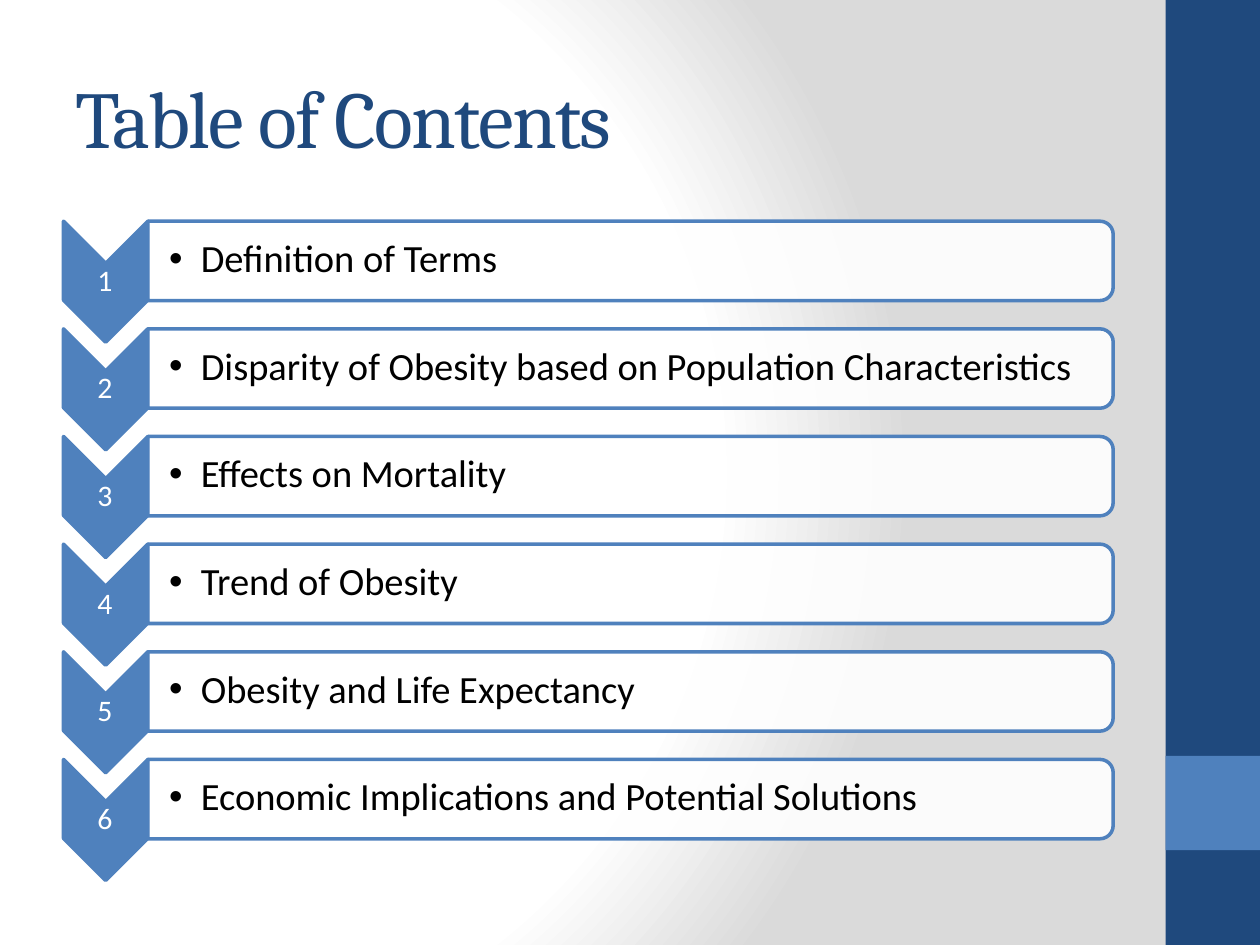
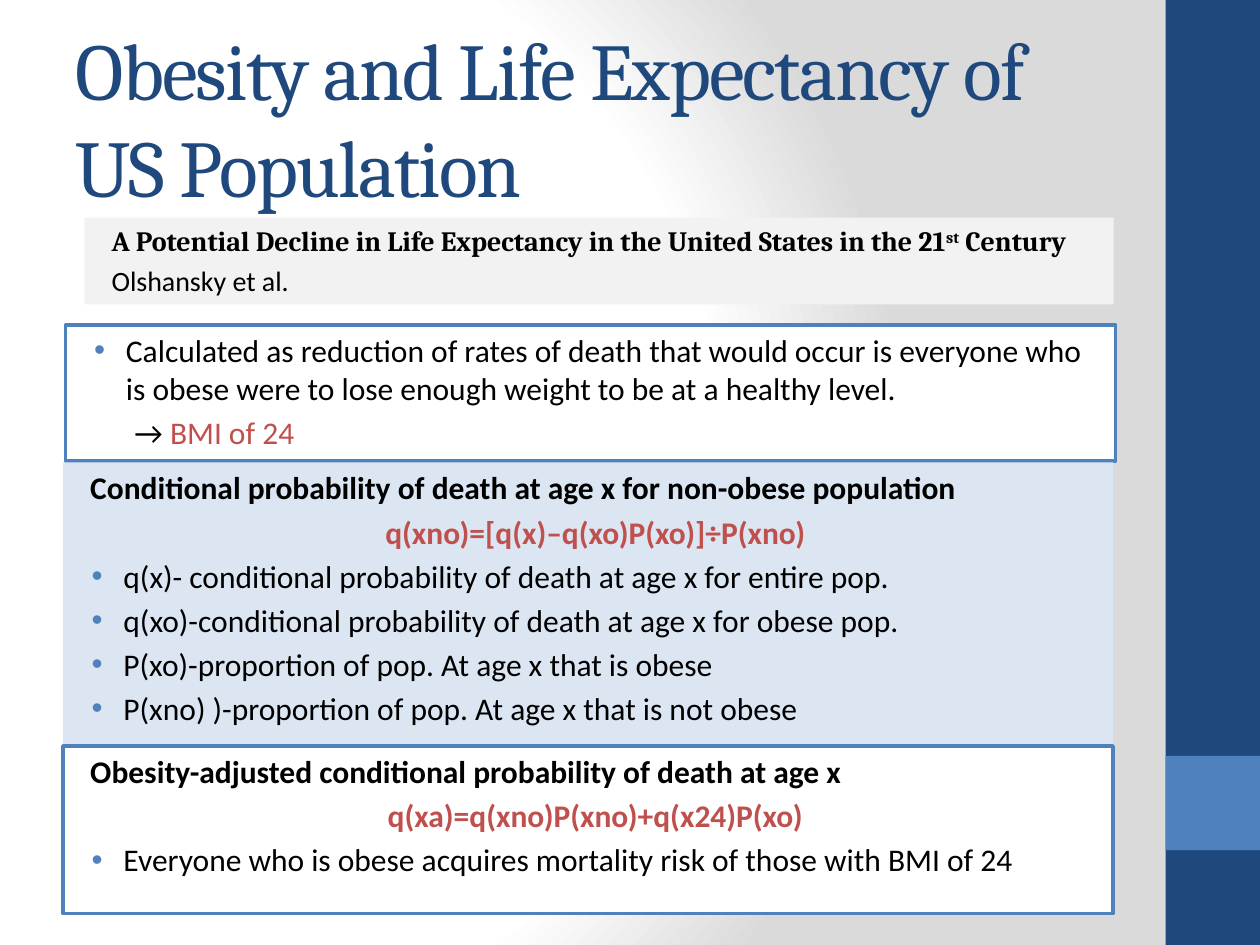
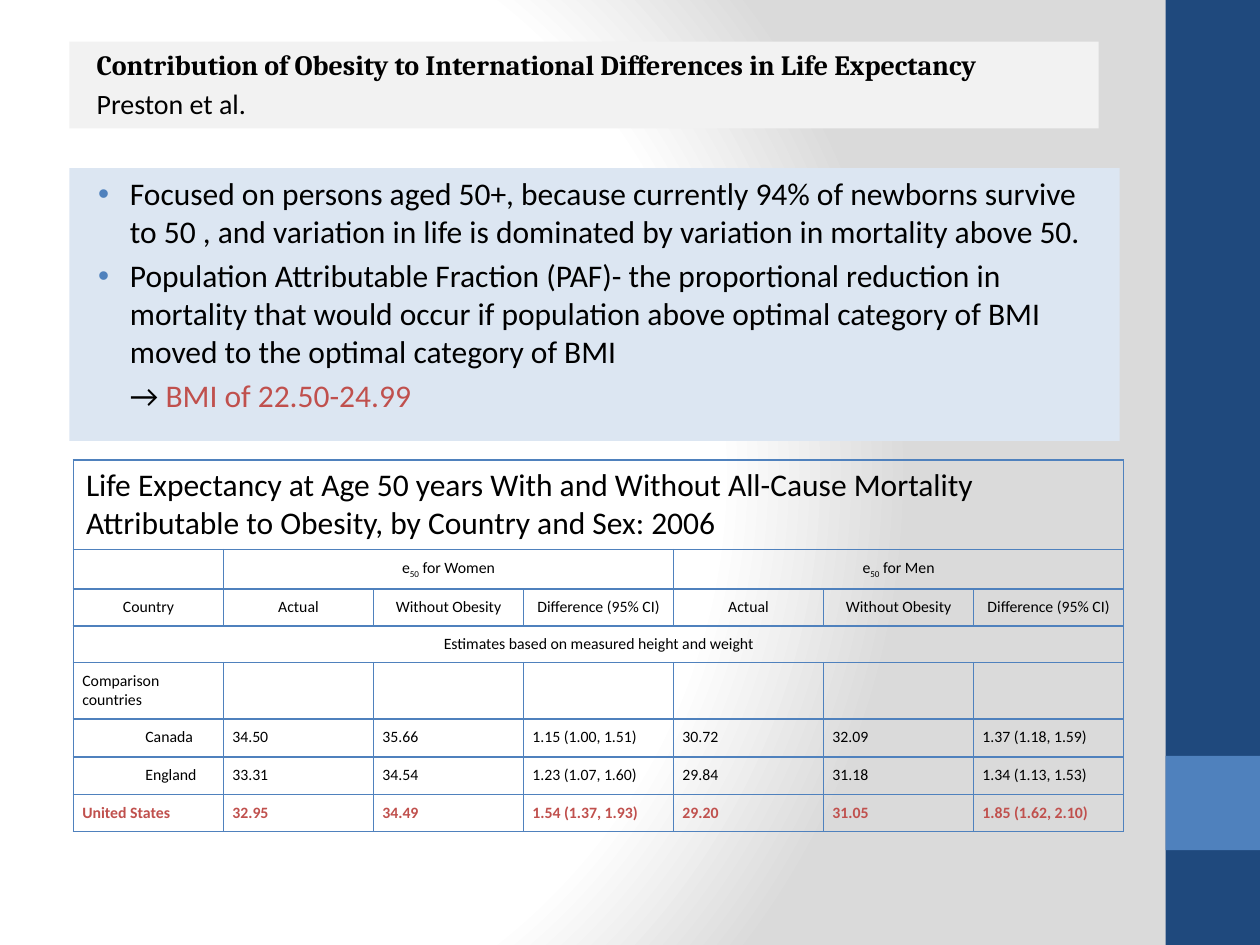
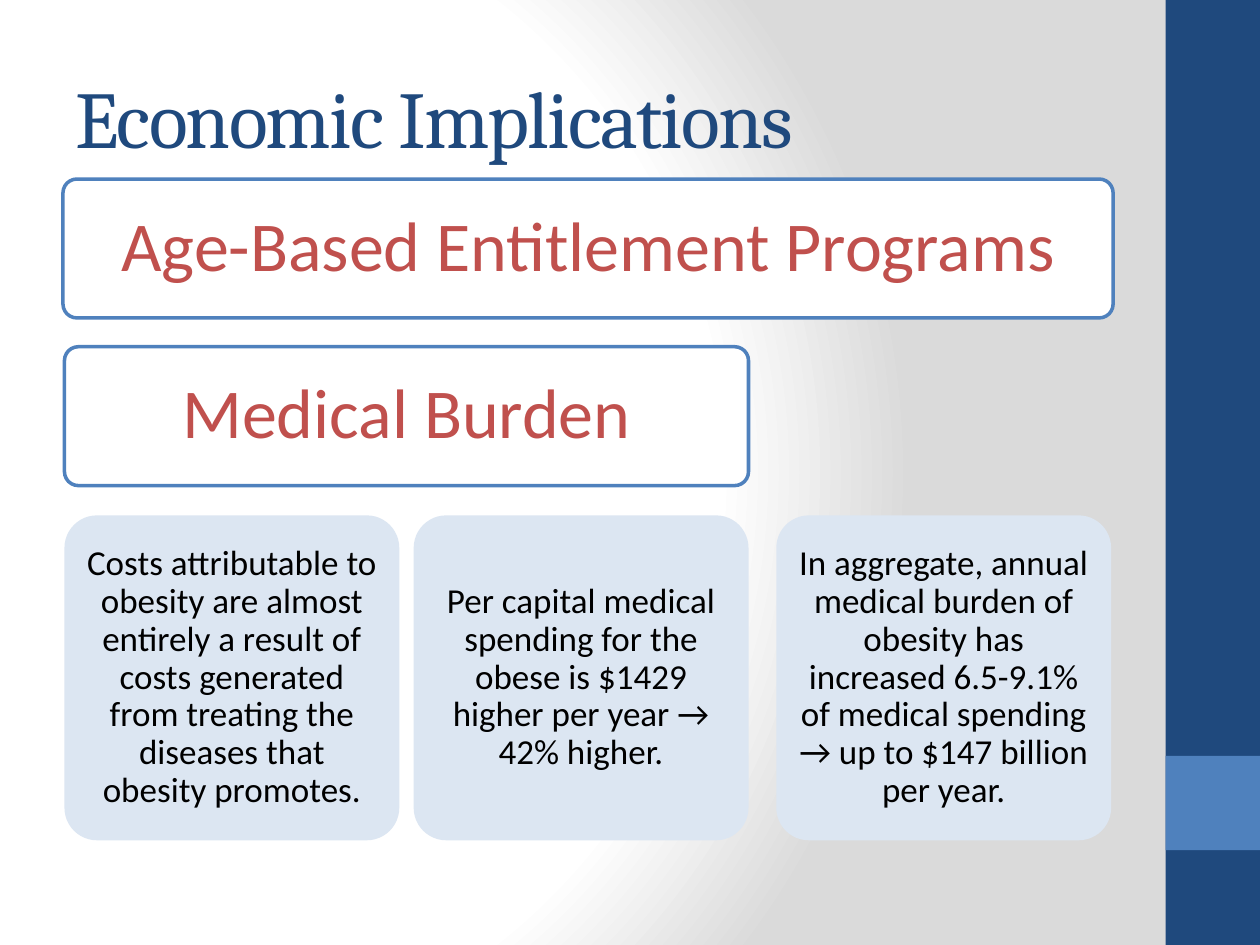
from lxml.etree import SubElement
from pptx import Presentation
from pptx.dml.color import RGBColor
from pptx.enum.shapes import MSO_SHAPE as Shape
from pptx.enum.text import MSO_ANCHOR as Anchor, MSO_AUTO_SIZE as AutoSize, PP_ALIGN as Align
from pptx.oxml import parse_xml
from pptx.oxml.ns import nsdecls, qn
from pptx.util import Cm, Pt

COLORS = {
    "navy": "1F497D",
    "blue": "4F81BD",
    "pale": "DCE6F2",
    "gray": "F2F2F2",
    "shade": "DADADA",
    "white": "FFFFFF",
    "black": "000000",
    "red": "C0504D",
}
RGB = {name: RGBColor.from_string(value) for name, value in COLORS.items()}


def add_box(page, kind, left, top, width, height, fill, line=None):
    box = page.shapes.add_shape(kind, Cm(left), Cm(top), Cm(width), Cm(height))
    box.shadow.inherit = False
    box.fill.solid()
    box.fill.fore_color.rgb = RGB[fill]
    if line:
        box.line.color.rgb = RGB[line]
        box.line.width = Pt(2)
    else:
        box.line.fill.background()
    box.text_frame.word_wrap = True
    box.text_frame.vertical_anchor = Anchor.TOP
    return box


def add_para(frame, parts, size, color="black", font="Calibri", bold=False,
             align=Align.LEFT, indent=0, bullet=None, before=0, spacing=None):
    """Fill the first empty paragraph or add one; parts is a text or (text, colour, baseline) runs."""
    para = frame.add_paragraph() if frame.text else frame.paragraphs[0]
    para.alignment = align
    para.space_before = Pt(before)
    para.line_spacing = spacing
    props = para._p.get_or_add_pPr()
    props.set("marL", str(Cm(indent)))
    props.set("indent", str(-Cm(0.64) if bullet else 0))
    if bullet:
        bullet_color = SubElement(props, qn("a:buClr"))
        SubElement(bullet_color, qn("a:srgbClr")).set("val", COLORS[bullet])
        SubElement(props, qn("a:buFont")).set("typeface", "Arial")
        SubElement(props, qn("a:buChar")).set("char", "•")
    para.font.size = Pt(size)
    para.font.name = font
    para.font.bold = bold
    para.font.color.rgb = RGB[color]
    for text, run_color, baseline in [(parts, None, 0)] if isinstance(parts, str) else parts:
        span = para.add_run()
        span.text = text
        if run_color:
            span.font.color.rgb = RGB[run_color]
        if baseline:
            span._r.get_or_add_rPr().set("baseline", str(baseline * 1000))


deck = Presentation()
deck.slide_width, deck.slide_height = Cm(25.4), Cm(19.05)

# Shared background, side band and titles
TITLES = [
    "Table of Contents",
    "Obesity and Life Expectancy of US Population",
    None,
    "Economic Implications",
]
pages = []
for title in TITLES:
    page = deck.slides.add_slide(deck.slide_layouts[5 if title else 6])
    pages.append(page)
    if not title:
        continue
    holder = page.shapes.title
    holder.left, holder.top, holder.width, holder.height = Cm(1.27), Cm(0.76), Cm(21.17), Cm(3.18)
    holder.text_frame.auto_size = AutoSize.NONE
    holder.text_frame.vertical_anchor = Anchor.MIDDLE
    add_para(holder.text_frame, title, 46, "navy", "Cambria")
    holder.text_frame.paragraphs[0].runs[0]._r.get_or_add_rPr().set("spc", "-100")
contents_page, method_page, country_page, cost_page = pages

master = deck.slide_master
common = master.element.find(qn("p:cSld"))
for old_background in common.findall(qn("p:bg")):
    common.remove(old_background)
stops = "".join(
    f'<a:gs pos="{position}000"><a:srgbClr val="{COLORS[name]}"/></a:gs>'
    for position, name in [(0, "white"), (75, "white"), (100, "shade")]
)
common.insert(0, parse_xml(
    f'<p:bg {nsdecls("p", "a")}><p:bgPr><a:gradFill rotWithShape="1"><a:gsLst>{stops}</a:gsLst>'
    '<a:path path="circle"><a:fillToRect l="20000" t="50000" r="100000" b="50000"/></a:path>'
    "</a:gradFill><a:effectLst/></p:bgPr></p:bg>"
))
side_band = add_box(contents_page, Shape.RECTANGLE, 23.5, 0, 1.9, 19.05, "navy")
accent = add_box(contents_page, Shape.RECTANGLE, 23.5, 15.24, 1.9, 1.9, "blue")
for position, band in enumerate([side_band, accent], 2):
    master.shapes.element.insert(position, band.element)

# Table of contents
TOPICS = [
    "Definition of Terms",
    "Disparity of Obesity based on Population Characteristics",
    "Effects on Mortality",
    "Trend of Obesity",
    "Obesity and Life Expectancy",
    "Economic Implications and Potential Solutions",
]
for index, topic in enumerate(TOPICS):
    shift = 2.17 * index
    chevron = add_box(contents_page, Shape.CHEVRON, 0.91, 4.83 + shift, 2.44, 1.7, "blue", "blue")
    card = add_box(contents_page, Shape.ROUND_2_SAME_RECTANGLE,
                   11.91, -4.47 + shift, 1.6, 19.46, "white", "blue")
    chevron.rotation = card.rotation = 90
    card_color = card.element.spPr.find(qn("a:solidFill"))[0]
    SubElement(card_color, qn("a:alpha")).set("val", "90000")

    number_box = contents_page.shapes.add_textbox(Cm(1.27), Cm(5.31 + shift), Cm(1.7), Cm(0.74))
    topic_box = contents_page.shapes.add_textbox(Cm(2.98), Cm(4.52 + shift), Cm(19.38), Cm(1.45))
    for box, inset in [(number_box, 0.03), (topic_box, 0.43)]:
        frame = box.text_frame
        frame.word_wrap = True
        frame.vertical_anchor = Anchor.MIDDLE
        frame.margin_left = Cm(inset)
        frame.margin_right = frame.margin_top = frame.margin_bottom = Cm(0.04)
    add_para(number_box.text_frame, str(index + 1), 17, "white", align=Align.CENTER, spacing=0.9)
    add_para(topic_box.text_frame, topic, 22, indent=0.64, bullet="black", spacing=0.9)

# Cited studies on the two life expectancy slides
STUDIES = [
    (method_page, 1.7, 4.39, "Olshansky et al.", [
        ("A Potential Decline in Life Expectancy in the United States in the 21", None, 0),
        ("st", None, 30),
        (" Century", None, 0),
    ]),
    (country_page, 1.4, 0.84, "Preston et al.",
     "Contribution of Obesity to International Differences in Life Expectancy"),
]
for page, left, top, authors, study in STUDIES:
    box = add_box(page, Shape.RECTANGLE, left, top, 20.75, 1.75, "gray")
    add_para(box.text_frame, study, 16, font="Cambria", bold=True, indent=0.3, before=3.2)
    add_para(box.text_frame, authors, 16, indent=0.3, before=3.2)

# Text panels on the two life expectancy slides
HEADING = {"bold": True, "indent": 0.3}
FORMULA = {"bold": True, "indent": 0.3, "color": "red", "align": Align.CENTER}
POINT = {"indent": 0.97, "bullet": "blue"}
PANELS = [
    (method_page, 1.32, 6.55, 2.74, "white", "blue", [
        ("Calculated as reduction of rates of death that would occur is everyone who is obese "
         "were to lose enough weight to be at a healthy level.", POINT),
        ([("→ ", None, 0), ("BMI of 24", "red", 0)], {"indent": 1.14}),
    ]),
    (method_page, 1.27, 9.32, 5.72, "pale", None, [
        ("Conditional probability of death at age x for non-obese population", HEADING),
        ("q(xno)=[q(x)–q(xo)P(xo)]÷P(xno)", FORMULA),
        ("q(x)- conditional probability of death at age x for entire pop.", POINT),
        ("q(xo)-conditional probability of death at age x for obese pop.", POINT),
        ("P(xo)-proportion of pop. At age x that is obese", POINT),
        ("P(xno) )-proportion of pop. At age x that is not obese", POINT),
    ]),
    (method_page, 1.27, 15.04, 3.38, "white", "blue", [
        ("Obesity-adjusted conditional probability of death at age x", HEADING),
        ("q(xa)=q(xno)P(xno)+q(x24)P(xo)", FORMULA),
        ("Everyone who is obese acquires mortality risk of those with BMI of 24", POINT),
    ]),
    (country_page, 1.4, 3.39, 5.5, "pale", None, [
        ("Focused on persons aged 50+, because currently 94% of newborns survive to 50 , "
         "and variation in life is dominated by variation in mortality above 50.", POINT),
        ("Population Attributable Fraction (PAF)- the proportional reduction in mortality that "
         "would occur if population above optimal category of BMI moved to the optimal "
         "category of BMI", POINT),
        ([("→ ", None, 0), ("BMI of 22.50-24.99", "red", 0)], {"indent": 0.97}),
    ]),
]
for page, left, top, height, fill, line, lines in PANELS:
    panel = add_box(page, Shape.RECTANGLE, left, top, 21.17, height, fill, line)
    for text, style in lines:
        add_para(panel.text_frame, text, 18, before=3.6, **style)

# Life expectancy tables: top, row heights, merges (row, first, last column), rows
CAPTION = ("Life Expectancy at Age 50 years With and Without All-Cause Mortality "
           "Attributable to Obesity, by Country and Sex: 2006")
ESTIMATES = "Estimates based on measured height and weight"
MEASURES = ["Actual", "Without Obesity", "Difference (95% CI)"]
women, men = ([("e", None, 0), ("50", None, -25), (f" for {sex}", None, 0)]
              for sex in ("Women", "Men"))
TABLES = [
    (9.27, [1.81, 0.79, 0.74], [(0, 0, 6), (1, 1, 3), (1, 4, 6)], [
        [CAPTION] + [""] * 6,
        ["", women, "", "", men, "", ""],
        ["Country"] + MEASURES * 2,
    ]),
    (12.61, [0.74, 1.14, 0.76, 0.76, 0.74], [(0, 0, 6)], [
        [ESTIMATES] + [""] * 6,
        ["Comparison countries"] + [""] * 6,
        ["Canada", "34.50", "35.66", "1.15 (1.00, 1.51)", "30.72", "32.09", "1.37 (1.18, 1.59)"],
        ["England", "33.31", "34.54", "1.23 (1.07, 1.60)", "29.84", "31.18", "1.34 (1.13, 1.53)"],
        ["United States", "32.95", "34.49", "1.54 (1.37, 1.93)",
         "29.20", "31.05", "1.85 (1.62, 2.10)"],
    ]),
]
for top, heights, merges, rows in TABLES:
    table = country_page.shapes.add_table(
        len(rows), 7, Cm(1.48), Cm(top), Cm(21.17), Cm(sum(heights))).table
    table.first_row = table.horz_banding = False
    for row, height in zip(table.rows, heights):
        row.height = Cm(height)
    for row_index, first, last in merges:
        table.cell(row_index, first).merge(table.cell(row_index, last))
    for row_index, values in enumerate(rows):
        is_caption = values[0] == CAPTION
        is_highlight = values[0] == "United States"
        is_centered = not is_caption and (len(rows) == 3 or row_index == 0)
        for column, value in enumerate(values):
            cell = table.cell(row_index, column)
            if is_caption:
                cell.vertical_anchor = Anchor.MIDDLE
            else:
                cell.margin_left = cell.margin_right = Cm(0.18)
                cell.margin_top = cell.margin_bottom = Cm(0.18 if value else 0)
            if value:
                add_para(cell.text_frame, value, 18 if is_caption else 9,
                         "red" if is_highlight else "black", bold=is_highlight,
                         align=Align.CENTER if is_centered else Align.LEFT,
                         indent=1.27 if value in ("Canada", "England") else 0)
            else:
                # An empty cell takes its line height from the end mark
                SubElement(cell.text_frame.paragraphs[0]._p, qn("a:endParaRPr"), sz="900")
            cell_props = cell._tc.get_or_add_tcPr()
            for side in ("lnL", "lnR", "lnT", "lnB"):
                border = SubElement(cell_props, qn(f"a:{side}"), w=str(Pt(1)))
                border_fill = SubElement(border, qn("a:solidFill"))
                SubElement(border_fill, qn("a:srgbClr")).set("val", COLORS["blue"])
            cell.fill.background()

# Economic implications: left, top, width, height, fill, line, size, colour, inset, text
COST_BOXES = [
    (1.27, 3.61, 21.17, 2.8, "white", "blue", 40, "red", 0.43, "Age-Based Entitlement Programs"),
    (1.3, 6.99, 13.79, 2.8, "white", "blue", 40, "red", 0.43, "Medical Burden"),
]
COSTS = [
    (1.3, "Costs attributable to obesity are almost entirely a result of costs generated from "
          "treating the diseases that obesity promotes."),
    (8.34, "Per capital medical spending for the obese is $1429 higher per year → 42% higher."),
    (15.65, "In aggregate, annual medical burden of obesity has increased 6.5-9.1% of medical "
            "spending → up to $147 billion per year."),
]
for left, text in COSTS:
    COST_BOXES.append((left, 10.39, 6.75, 6.55, "pale", None, 20, "black", 0.2, text))
for left, top, width, height, fill, line, size, color, inset, text in COST_BOXES:
    box = add_box(cost_page, Shape.ROUNDED_RECTANGLE, left, top, width, height, fill, line)
    box.adjustments[0] = 0.1
    frame = box.text_frame
    frame.vertical_anchor = Anchor.MIDDLE
    frame.margin_left = frame.margin_right = frame.margin_top = frame.margin_bottom = Cm(inset)
    add_para(frame, text, size, color, align=Align.CENTER, spacing=0.9)

deck.save("out.pptx")
